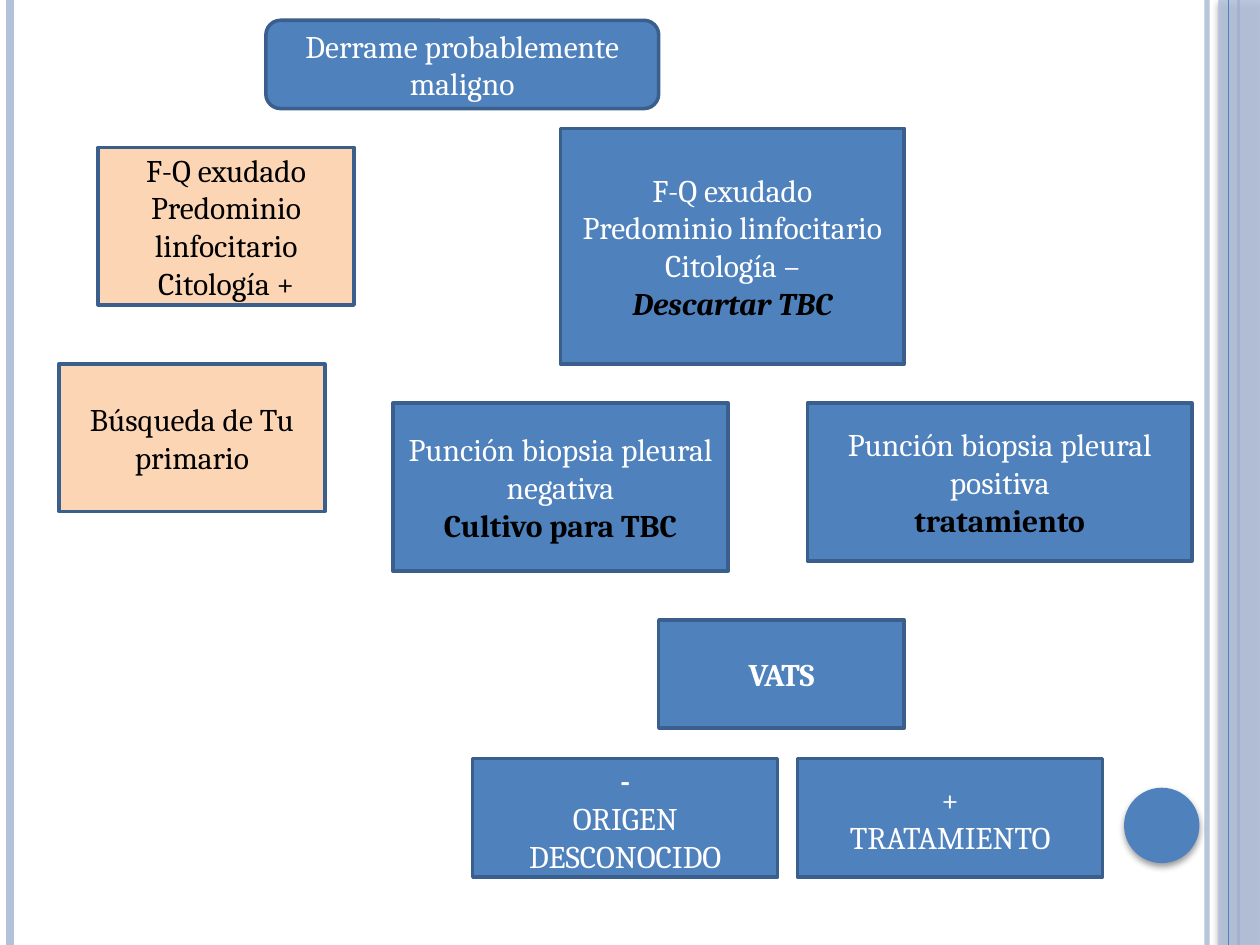
import pptx
import pptx.dml.color
import pptx.enum.shapes
import pptx.enum.text
import pptx.oxml.ns
import pptx.util
from lxml import etree

Cm = pptx.util.Cm
Pt = pptx.util.Pt
Shape = pptx.enum.shapes.MSO_SHAPE
qn = pptx.oxml.ns.qn

COLOURS = {
    "blue": "4F81BD",
    "pale": "B3C1DB",
    "peach": "FCD5B5",
    "edge": "3A5F8C",
    "white": "FFFFFF",
    "black": "000000",
}
PAGE_WIDTH, PAGE_HEIGHT = 25.4, 19.05

RULES = [
    (24.33, "pale", 3, 93),
    (0.2, "pale", 4.5, 100),
    (24.97, "blue", 1.5, 100),
]

BOXES = [
    (5.36, 0.41, 7.92, 1.78, Shape.ROUNDED_RECTANGLE, "blue",
     [("Derrame probablemente maligno", "")]),
    (1.98, 2.97, 5.16, 3.18, Shape.RECTANGLE, "peach",
     [("F-Q exudado", ""), ("Predominio linfocitario", ""), ("Citología +", "")]),
    (11.3, 2.59, 6.93, 4.75, Shape.RECTANGLE, "blue",
     [("F-Q exudado", ""), ("Predominio linfocitario", ""), ("Citología –", ""),
      ("Descartar TBC", "black bold italic")]),
    (7.92, 8.13, 6.76, 3.38, Shape.RECTANGLE, "blue",
     [("Punción biopsia pleural negativa", ""), ("Cultivo para TBC", "black bold")]),
    (16.28, 8.13, 7.75, 3.18, Shape.RECTANGLE, "blue",
     [("Punción biopsia pleural positiva", ""), ("tratamiento", "black bold")]),
    (1.19, 7.34, 5.36, 2.97, Shape.RECTANGLE, "peach",
     [("Búsqueda de Tu primario", "")]),
    (13.28, 12.5, 4.95, 2.18, Shape.RECTANGLE, "blue",
     [("VATS", "bold")]),
    (16.08, 15.29, 6.15, 2.39, Shape.RECTANGLE, "blue",
     [("+", ""), ("TRATAMIENTO", "")]),
    (9.53, 15.29, 6.15, 2.39, Shape.RECTANGLE, "blue",
     [("-", "bold"), ("ORIGEN DESCONOCIDO", "")]),
]


def colour(name):
    return pptx.dml.color.RGBColor.from_string(COLOURS[name])


def set_opacity(properties, percent):
    for tint in properties.iter(qn("a:srgbClr")):
        etree.SubElement(tint, qn("a:alpha"), val=str(percent * 1000))


def add_rule(page, x, name, width, opacity=100):
    rule = page.shapes.add_connector(
        pptx.enum.shapes.MSO_CONNECTOR.STRAIGHT, Cm(x), 0, Cm(x), Cm(PAGE_HEIGHT))
    rule.line.color.rgb = colour(name)
    rule.line.width = Pt(width)
    properties = rule._element.spPr
    if opacity < 100:
        set_opacity(properties, opacity)
    etree.SubElement(properties, qn("a:effectLst"))


def add_filled(page, kind, left, top, width, height, fill):
    shape = page.shapes.add_shape(kind, Cm(left), Cm(top), Cm(width), Cm(height))
    shape.shadow.inherit = False
    shape.fill.solid()
    shape.fill.fore_color.rgb = colour(fill)
    return shape


def add_ornament(page, kind, left, top, width, height, fill, opacity=100):
    shape = add_filled(page, kind, left, top, width, height, fill)
    shape.line.fill.background()
    properties = shape._element.spPr
    if opacity < 100:
        set_opacity(properties, opacity)
    shadow = etree.SubElement(
        properties.find(qn("a:effectLst")), qn("a:outerShdw"),
        blurRad=str(Pt(4)), dist=str(Pt(2)), dir="5400000", rotWithShape="0")
    etree.SubElement(shadow, qn("a:srgbClr"), val=COLOURS["black"])
    set_opacity(shadow, 40)


def add_box(page, left, top, width, height, kind, fill, lines):
    box = add_filled(page, kind, left, top, width, height, fill)
    box.line.color.rgb = colour("edge")
    box.line.width = Pt(2)
    frame = box.text_frame
    frame.word_wrap = True
    frame.vertical_anchor = pptx.enum.text.MSO_ANCHOR.MIDDLE
    frame.text = "\n".join(text for text, style in lines)
    for para, (text, style) in zip(frame.paragraphs, lines):
        para.alignment = pptx.enum.text.PP_ALIGN.CENTER
        dark = fill == "peach" or "black" in style
        for span in para.runs:
            span.font.name = "Cambria"
            span.font.size = Pt(18)
            span.font.bold = "bold" in style
            span.font.italic = "italic" in style
            span.font.color.rgb = colour("black" if dark else "white")


def main():
    deck = pptx.Presentation()
    deck.slide_width = Cm(PAGE_WIDTH)
    deck.slide_height = Cm(PAGE_HEIGHT)
    page = deck.slides.add_slide(deck.slide_layouts[6])
    for rule in RULES:
        add_rule(page, *rule)
    add_ornament(page, Shape.RECTANGLE, 24.56, 0, 0.84, PAGE_HEIGHT, "pale", 87)
    add_rule(page, 24.77, "blue", 0.75)
    add_ornament(page, Shape.OVAL, 22.66, 15.88, 1.52, 1.52, "blue")
    for box in BOXES:
        add_box(page, *box)
    deck.save("out.pptx")


if __name__ == "__main__":
    main()
